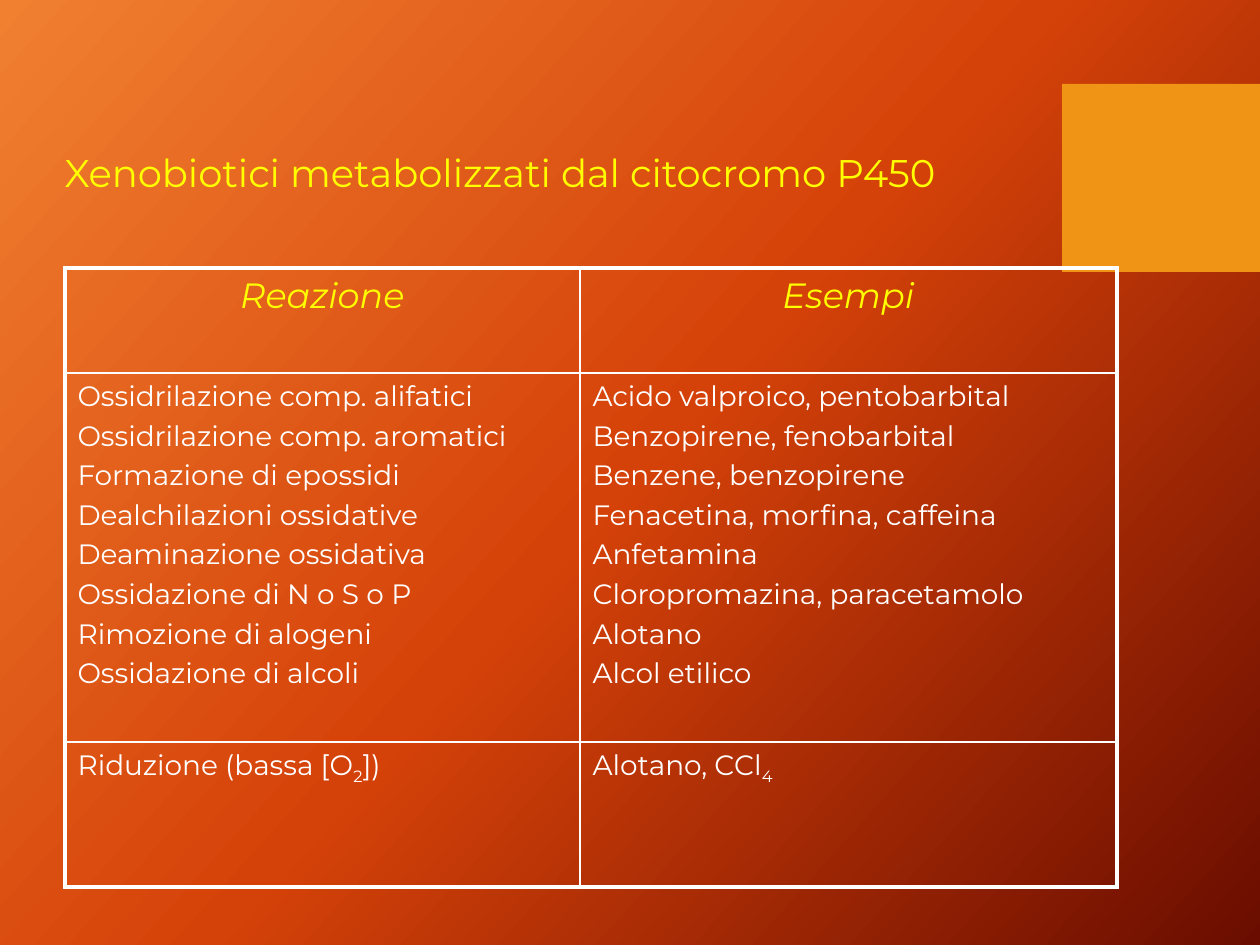
"""Build a slide with a table of xenobiotics metabolised by cytochrome P450."""
from dataclasses import dataclass

from pptx import Presentation
from pptx.dml.color import RGBColor
from pptx.enum.shapes import MSO_SHAPE as Shape
from pptx.enum.text import MSO_ANCHOR as Anchor, MSO_AUTO_SIZE as AutoSize, PP_ALIGN as Align
from pptx.oxml import parse_xml
from pptx.oxml.ns import nsdecls
from pptx.util import Emu, Pt

PX = 914400 / 126
TITLE = "Xenobiotici metabolizzati dal citocromo P450"
HEADERS = ["Reazione", "Esempi"]
OXIDATIONS = [
    ("Ossidrilazione comp. alifatici", "Acido valproico, pentobarbital"),
    ("Ossidrilazione comp. aromatici", "Benzopirene, fenobarbital"),
    ("Formazione di epossidi", "Benzene, benzopirene"),
    ("Dealchilazioni ossidative", "Fenacetina, morfina, caffeina"),
    ("Deaminazione ossidativa", "Anfetamina"),
    ("Ossidazione di N o S o P", "Cloropromazina, paracetamolo"),
    ("Rimozione di alogeni", "Alotano"),
    ("Ossidazione di alcoli", "Alcol etilico"),
]
REDUCTION = ["Riduzione (bassa [O_2_])", "Alotano, CCl_4_"]


@dataclass(frozen=True)
class Theme:
    """Colours, font and sizes of the slide."""
    font: str = "Montserrat"
    accent: str = "FFFF00"
    text: str = "FFFFFF"
    square: str = "F09415"
    gradient: tuple = ((0, "F18031"), (50, "D54209"), (100, "6A0D00"))
    angle: int = 42
    title_size: int = 22
    header_size: int = 20
    body_size: int = 16
    outer_line: float = 2.25
    inner_line: float = 1


def px(length):
    """Turn px into EMU."""
    return Emu(round(length * PX))


def write(frame, lines, *, font, size, color, italic=False, align=Align.LEFT, gap=0.2):
    """Write one paragraph per line; parts between underscores become subscripts."""
    for index, line in enumerate(lines):
        para = frame.add_paragraph() if index else frame.paragraphs[0]
        para.alignment = align
        para.space_before = Pt(size * gap if index else 0)
        for position, part in enumerate(line.split("_")):
            if not part:
                continue
            span = para.add_run()
            span.text = part
            span.font.name = font
            span.font.size = Pt(size)
            span.font.bold = False
            span.font.italic = italic
            span.font.color.rgb = RGBColor.from_string(color)
            if position % 2:
                span.font._element.set("baseline", "-25000")


class SlideBuilder:
    """Holds the theme and the current slide."""

    def __init__(self, page, theme):
        """Keep the slide and its theme."""
        self.page = page
        self.theme = theme

    def background(self):
        """Fill the slide with the theme gradient."""
        stops = "".join(
            f'<a:gs pos="{place * 1000}"><a:srgbClr val="{color}"/></a:gs>'
            for place, color in self.theme.gradient
        )
        self.page._element.cSld.insert(0, parse_xml(
            f'<p:bg {nsdecls("p", "a")}><p:bgPr><a:gradFill rotWithShape="1">'
            f'<a:gsLst>{stops}</a:gsLst><a:lin ang="{self.theme.angle * 60000}" scaled="0"/>'
            '</a:gradFill><a:effectLst/></p:bgPr></p:bg>'
        ))

    def square(self, left, top, width, height):
        """Add the plain decorative block."""
        box = self.page.shapes.add_shape(Shape.RECTANGLE, *map(px, (left, top, width, height)))
        box.shadow.inherit = False
        box.fill.solid()
        box.fill.fore_color.rgb = RGBColor.from_string(self.theme.square)
        box.line.fill.background()

    def title(self, text, left, top, width, height):
        """Place and format the title placeholder."""
        box = self.page.shapes.title
        box.left, box.top, box.width, box.height = map(px, (left, top, width, height))
        frame = box.text_frame
        frame.word_wrap = True
        frame.auto_size = AutoSize.NONE
        frame.vertical_anchor = Anchor.MIDDLE
        write(frame, [text], font=self.theme.font, size=self.theme.title_size,
              color=self.theme.accent)

    def borders(self, cell, outer):
        """Draw the four cell borders, thicker on the sides named in outer."""
        for side in "LRTB":
            weight = self.theme.outer_line if side in outer else self.theme.inner_line
            cell._tc.get_or_add_tcPr().append(parse_xml(
                f'<a:ln{side} {nsdecls("a")} w="{Pt(weight)}"><a:solidFill>'
                f'<a:srgbClr val="{self.theme.text}"/></a:solidFill></a:ln{side}>'
            ))

    def table(self, rows, left, top, widths, heights):
        """Add the table, where each cell is a list of lines and the first row is the header."""
        theme = self.theme
        table = self.page.shapes.add_table(
            len(heights), len(widths), *map(px, (left, top, sum(widths), sum(heights)))
        ).table
        table.first_row = table.horz_banding = False
        for column, width in zip(table.columns, widths):
            column.width = px(width)
        for row, height in zip(table.rows, heights):
            row.height = px(height)
        header = dict(size=theme.header_size, color=theme.accent, italic=True, align=Align.CENTER)
        body = dict(size=theme.body_size, color=theme.text)
        last_row, last_column = len(heights) - 1, len(widths) - 1
        for r, row in enumerate(rows):
            for c, lines in enumerate(row):
                cell = table.cell(r, c)
                edges = {"L": c == 0, "R": c == last_column, "T": r == 0, "B": r == last_row}
                self.borders(cell, [side for side, is_outer in edges.items() if is_outer])
                cell.fill.background()
                write(cell.text_frame, lines, font=theme.font, **(body if r else header))


def main():
    """Build and save the deck."""
    deck = Presentation()
    deck.slide_width, deck.slide_height = px(1260), px(945)
    builder = SlideBuilder(deck.slides.add_slide(deck.slide_layouts[5]), Theme())
    builder.background()
    builder.square(1062, 84, 198, 188)
    rows = [[[text] for text in HEADERS], list(zip(*OXIDATIONS)), [[text] for text in REDUCTION]]
    builder.table(rows, 65, 268, widths=[515, 537], heights=[105, 369, 145])
    builder.title(TITLE, 52, 142, 990, 60)
    deck.save("out.pptx")


if __name__ == "__main__":
    main()
